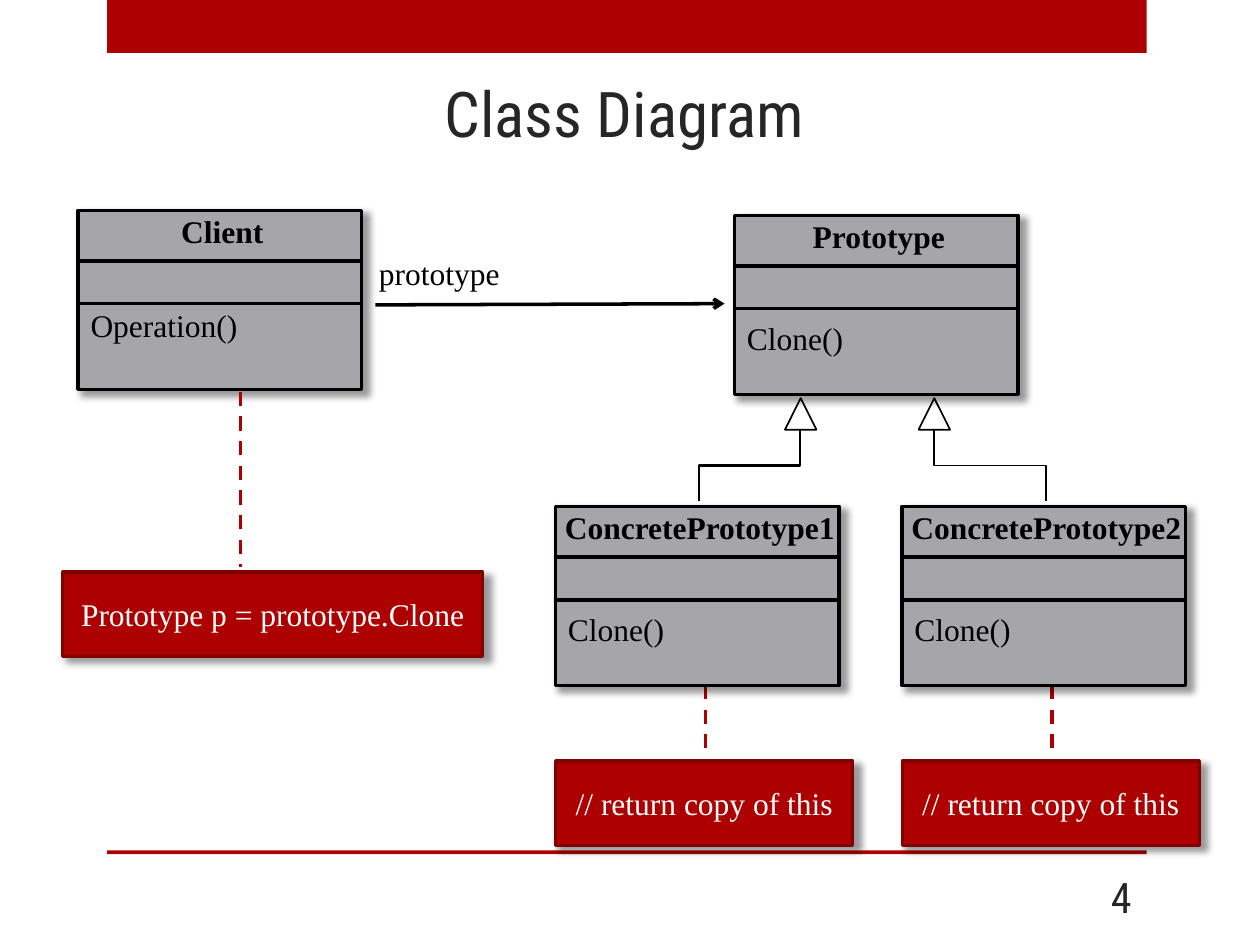
from lxml.etree import SubElement
from pptx import Presentation
from pptx.dml.color import RGBColor
from pptx.enum.dml import MSO_LINE
from pptx.enum.shapes import MSO_CONNECTOR, MSO_SHAPE
from pptx.enum.text import MSO_ANCHOR, PP_ALIGN
from pptx.oxml import parse_xml
from pptx.oxml.ns import nsdecls, qn
from pptx.util import Inches, Pt

COLORS = {
    "accent": "AD0101",
    "accent_edge": "800101",
    "class_fill": "A5A5AA",
    "ink": "000000",
    "heading": "262626",
    "white": "FFFFFF",
}
HEADING_FONT = "Roboto Condensed"
BODY_FONT = "Times New Roman"
CLASS_WIDTH, CLASS_HEIGHT = 2.25, 1.42
NOTE_HEIGHT = 0.67


def rgb(name):
    return RGBColor.from_string(COLORS[name])


class DiagramSlide:
    def __init__(self, slide):
        self.slide = slide
        self.shapes = slide.shapes

    def set_text(self, frame, text, size=18, font=BODY_FONT, color="ink",
                 align=PP_ALIGN.LEFT, bold=False, anchor=MSO_ANCHOR.TOP):
        frame.text = text
        frame.vertical_anchor = anchor
        paragraph = frame.paragraphs[0]
        paragraph.alignment = align
        paragraph.font.size = Pt(size)
        paragraph.font.name = font
        paragraph.font.bold = bold
        paragraph.font.color.rgb = rgb(color)

    def title(self, text):
        heading = self.shapes.title
        heading.left, heading.top = Inches(0.83), Inches(0.53)
        heading.width, heading.height = Inches(8.25), Inches(0.72)
        self.set_text(heading.text_frame, text, 36, HEADING_FONT, "heading",
                      PP_ALIGN.CENTER, anchor=MSO_ANCHOR.MIDDLE)

    def label(self, text, left, top, width, height=0.4, wrap=False, **style):
        box = self.shapes.add_textbox(
            Inches(left), Inches(top), Inches(width), Inches(height))
        box.text_frame.word_wrap = wrap
        self.set_text(box.text_frame, text, **style)

    def shape(self, left, top, width, height, fill=None, edge=None,
              edge_width=2, preset=MSO_SHAPE.RECTANGLE, shadow=False):
        shape = self.shapes.add_shape(
            preset, Inches(left), Inches(top), Inches(width), Inches(height))
        shape.shadow.inherit = False
        if fill:
            shape.fill.solid()
            shape.fill.fore_color.rgb = rgb(fill)
        else:
            shape.fill.background()
        if edge:
            shape.line.color.rgb = rgb(edge)
            shape.line.width = Pt(edge_width)
        else:
            shape.line.fill.background()
        if shadow:
            self.drop_shadow(shape)
        return shape

    def drop_shadow(self, shape):
        effects = shape._element.spPr.find(qn("a:effectLst"))
        effects.append(parse_xml(
            f'<a:outerShdw {nsdecls("a")} blurRad="{Pt(4)}" dist="{Pt(3)}" '
            'dir="2700000" sx="101000" sy="101000" algn="tl" rotWithShape="0">'
            f'<a:srgbClr val="{COLORS["ink"]}"><a:alpha val="40000"/></a:srgbClr>'
            '</a:outerShdw>'))

    def line(self, start, end, color="ink", width=2, dashed=False,
             arrow=False, kind=MSO_CONNECTOR.STRAIGHT):
        line = self.shapes.add_connector(
            kind, *(Inches(value) for value in (*start, *end)))
        line.line.color.rgb = rgb(color)
        line.line.width = Pt(width)
        if dashed:
            line.line.dash_style = MSO_LINE.DASH
        properties = line._element.spPr
        if arrow:
            SubElement(properties.find(qn("a:ln")), qn("a:tailEnd"), type="arrow")
        SubElement(properties, qn("a:effectLst"))
        return line

    def vertical_elbow(self, start, end, width):
        """Connect start down to end, leaving and arriving vertically."""
        center_x, center_y = (start[0] + end[0]) / 2, (start[1] + end[1]) / 2
        leftward = end[0] < start[0]
        # The elbow is laid out sideways and then turned a quarter.
        half_run = (end[1] - start[1]) / 2 * (1 if leftward else -1)
        half_rise = abs(end[0] - start[0]) / 2
        elbow = self.line((center_x - half_run, center_y - half_rise),
                          (center_x + half_run, center_y + half_rise),
                          width=width, kind=MSO_CONNECTOR.ELBOW)
        degrees = 90 if leftward else 270
        elbow._element.spPr.find(qn("a:xfrm")).set("rot", str(degrees * 60000))

    def class_box(self, name, method, left, top, method_offset=0.77):
        self.shape(left, top, CLASS_WIDTH, CLASS_HEIGHT, "class_fill", "ink",
                   shadow=True)
        for offset in (0.4, 0.74):
            self.line((left, top + offset), (left + CLASS_WIDTH, top + offset))
        self.label(name, left - 0.04, top - 0.04, 2.37,
                   align=PP_ALIGN.CENTER, bold=True)
        # An unwrapped label is centred on its box, so the box fits the text.
        self.label(method, left, top + method_offset,
                   1.38 if method == "Operation()" else 0.97)

    def note(self, text, left, top, width):
        note = self.shape(left, top, width, NOTE_HEIGHT, "accent",
                          "accent_edge", 1.75, shadow=True)
        self.set_text(note.text_frame, text, color="white",
                      align=PP_ALIGN.CENTER, anchor=MSO_ANCHOR.MIDDLE)

    def note_link(self, x, top, bottom):
        self.line((x, top), (x, bottom), "accent", dashed=True)


def main():
    deck = Presentation()
    deck.slide_width, deck.slide_height = Inches(10), Inches(7.5)
    diagram = DiagramSlide(deck.slides.add_slide(deck.slide_layouts[5]))

    for band_top, band_height in ((0, 0.42), (6.75, 0.03)):
        diagram.shape(0.85, band_top, 8.25, band_height, "accent")
    diagram.title("Class Diagram")
    diagram.label("4", 8.25, 6.92, 0.83, wrap=True, size=24, font=HEADING_FONT,
                  color="heading", align=PP_ALIGN.RIGHT, anchor=MSO_ANCHOR.MIDDLE)

    diagram.class_box("Prototype", "Clone()", 5.83, 1.71)
    diagram.class_box("Client", "Operation()", 0.62, 1.67, method_offset=0.71)
    diagram.line((2.98, 2.42), (5.75, 2.41), arrow=True)
    diagram.label("prototype", 2.91, 1.97, 1.17)
    diagram.note_link(1.91, 3.11, 4.5)
    diagram.note("Prototype p = prototype.Clone", 0.5, 4.54, 3.33)

    subclasses = (
        ("ConcretePrototype1", 4.41, 6.35, 1.25),
        ("ConcretePrototype2", 7.16, 7.41, 1),
    )
    for name, left, parent_x, elbow_width in subclasses:
        diagram.note_link(left + 1.19, 5.24, 6.04)
        diagram.note("// return copy of this", left, 6.04, 2.36)
        diagram.class_box(name, "Clone()", left, 4.02)
        diagram.shape(parent_x - 0.12, 3.16, 0.25, 0.25, edge="ink",
                      edge_width=1, preset=MSO_SHAPE.ISOSCELES_TRIANGLE)
        diagram.vertical_elbow((parent_x, 3.41), (left + 1.14, 3.98), elbow_width)

    deck.save("out.pptx")


if __name__ == "__main__":
    main()
